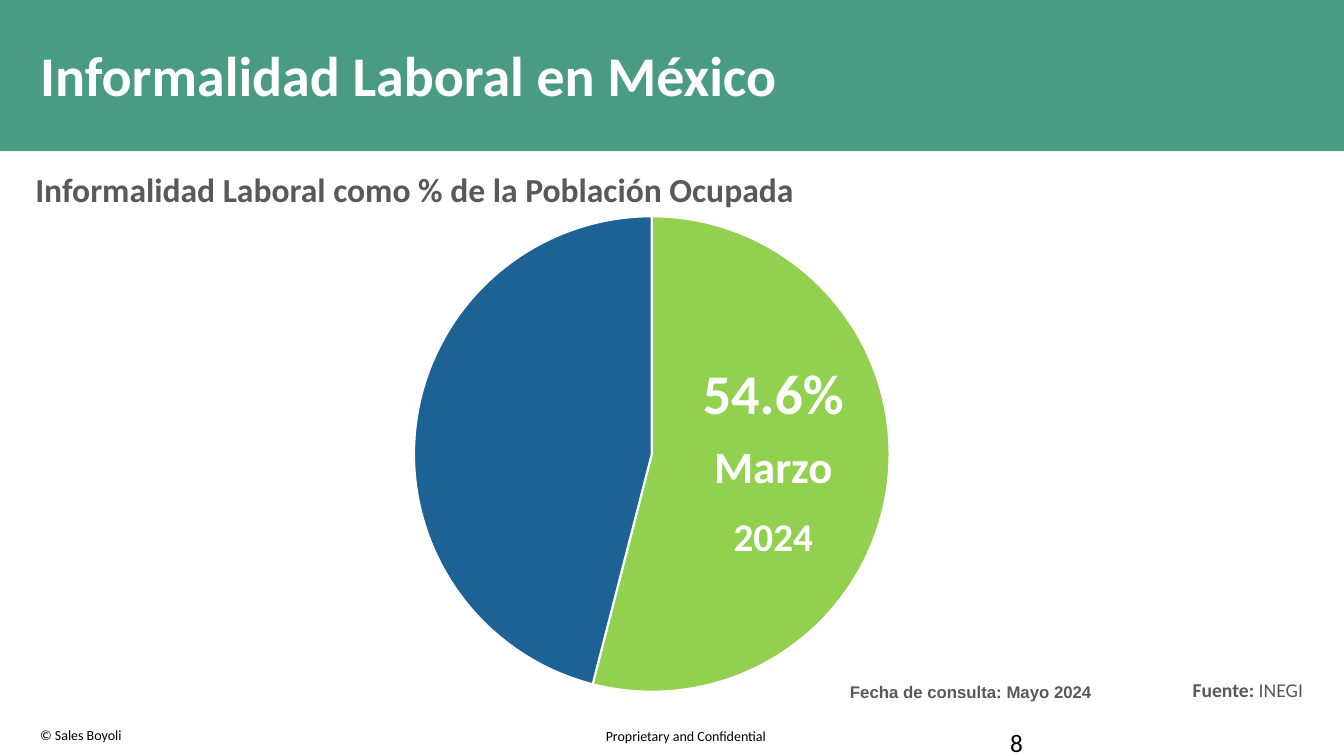
"""Build the slide on informal employment in Mexico."""
import pptx
import pptx.chart.data
import pptx.dml.color
import pptx.enum.chart
import pptx.enum.shapes
import pptx.enum.text
import pptx.oxml
import pptx.util
from dataclasses import dataclass

Inches = pptx.util.Inches
Pt = pptx.util.Pt
ALIGN = pptx.enum.text.PP_ALIGN
ANCHOR = pptx.enum.text.MSO_ANCHOR


@dataclass(frozen=True)
class Theme:
    font: str = "Calibri"
    date_font: str = "Arial"
    band: str = "4A9B83"
    white: str = "FFFFFF"
    black: str = "000000"
    gray: str = "595959"
    informal: str = "92D050"
    formal: str = "1D6294"
    title: int = 40
    month: int = 32
    year: int = 28
    subtitle: int = 24
    number: int = 18
    source: int = 14
    date: int = 12
    footer: int = 10


THEME = Theme()
SLIDE_SIZE = (13.33, 7.5)
BAND_HEIGHT = 1.5
TITLE = "Informalidad Laboral en México"
SUBTITLE = "Informalidad Laboral como % de la Población Ocupada"
QUERY_DATE = "Fecha de consulta: Mayo 2024"
SOURCE = ("Fuente:", " INEGI")
COPYRIGHT = "© Sales Boyoli"
NOTICE = "Proprietary and Confidential"
SLIDE_NUMBER = "8"
SHARES = [("1", 54, THEME.informal), ("2", 46, THEME.formal)]
HIGHLIGHT = [("54.6%", THEME.title), ("Marzo", THEME.month), ("2024", THEME.year)]
HIGHLIGHT_LINE = 47.8
CHART_BOX = (3.18, 2, 6.57, 5.01)
PIE_DIAMETER = 4.72


def color(value):
    return pptx.dml.color.RGBColor.from_string(value)


def set_font(font, size, fill, bold=None, name=THEME.font):
    font.name = name
    font.size = Pt(size)
    font.bold = bold
    font.color.rgb = color(fill)


def add_text(slide, box, lines, fill, bold=False, name=THEME.font, wrap=True,
             inset=None, anchor=ANCHOR.TOP, align=ALIGN.LEFT, spacing=None):
    shape = slide.shapes.add_textbox(*map(Inches, box))
    frame = shape.text_frame
    frame.word_wrap = wrap
    frame.vertical_anchor = anchor
    if inset is not None:
        frame.margin_left = frame.margin_right = Inches(inset)
        frame.margin_top = frame.margin_bottom = Inches(inset)
    for index, (text, size) in enumerate(lines):
        paragraph = frame.add_paragraph() if index else frame.paragraphs[0]
        paragraph.alignment = align
        paragraph.line_spacing = spacing
        for part in [text] if isinstance(text, str) else text:
            paragraph.add_run().text = part
        set_font(paragraph.font, size, fill, bold, name)
    return shape


def add_band(slide):
    band = slide.shapes.add_shape(
        pptx.enum.shapes.MSO_SHAPE.RECTANGLE, 0, 0,
        Inches(SLIDE_SIZE[0]), Inches(BAND_HEIGHT))
    band.shadow.inherit = False
    band.fill.solid()
    band.fill.fore_color.rgb = color(THEME.band)
    band.line.fill.background()


def fix_plot_size(chart):
    plot_area = chart.plots[0]._element.getparent()
    for layout in plot_area.findall(pptx.oxml.ns.qn("c:layout")):
        plot_area.remove(layout)
    width, height = (PIE_DIAMETER / side for side in CHART_BOX[2:])
    values = {"x": (1 - width) / 2, "y": (1 - height) / 2, "w": width, "h": height}
    sizes = "".join(f'<c:{key} val="{value:.3f}"/>' for key, value in values.items())
    plot_area.insert(0, pptx.oxml.parse_xml(
        f'<c:layout {pptx.oxml.ns.nsdecls("c")}><c:manualLayout>'
        '<c:layoutTarget val="inner"/><c:xMode val="edge"/><c:yMode val="edge"/>'
        f'{sizes}</c:manualLayout></c:layout>'))


def add_pie(slide):
    data = pptx.chart.data.CategoryChartData()
    data.categories = [category for category, _, _ in SHARES]
    data.add_series("Series 1", [value for _, value, _ in SHARES])
    chart = slide.shapes.add_chart(
        pptx.enum.chart.XL_CHART_TYPE.PIE, *map(Inches, CHART_BOX), data).chart
    chart.has_legend = False
    chart.has_title = False
    set_font(chart.font, THEME.footer, THEME.black)
    plot = chart.plots[0]
    plot.vary_by_categories = True
    for index, (_, _, fill) in enumerate(SHARES):
        slice_format = plot.series[0].points[index].format
        slice_format.fill.solid()
        slice_format.fill.fore_color.rgb = color(fill)
        slice_format.line.color.rgb = color(THEME.white)
        slice_format.line.width = Pt(1.5)
    fix_plot_size(chart)


def main():
    presentation = pptx.Presentation()
    presentation.slide_width, presentation.slide_height = map(Inches, SLIDE_SIZE)
    slide = presentation.slides.add_slide(presentation.slide_layouts[6])
    add_text(slide, (5.91, 7.17, 1.81, 0.27), [(NOTICE, THEME.footer)],
             THEME.black, wrap=False)
    add_text(slide, (0.3, 7.16, 3.37, 0.27), [(COPYRIGHT, THEME.footer)], THEME.black)
    add_band(slide)
    add_text(slide, (9.92, 7.17, 3.11, 0.25), [(SLIDE_NUMBER, THEME.number)], THEME.black)
    add_text(slide, (0.3, 0.14, 12.72, 1.27), [(TITLE, THEME.title)], THEME.white,
             bold=True, anchor=ANCHOR.MIDDLE, spacing=0.9)
    add_text(slide, (0.3, 1.63, 9.61, 0.5), [(SUBTITLE, THEME.subtitle)], THEME.gray,
             bold=True, inset=0.05)
    add_text(slide, (8.38, 6.71, 3.55, 0.3), [(QUERY_DATE, THEME.date)], THEME.gray,
             bold=True, name=THEME.date_font, inset=0.05)
    source = add_text(slide, (11.73, 6.68, 1.3, 0.34), [(SOURCE, THEME.source)],
                      THEME.gray, wrap=False)
    source.text_frame.paragraphs[0].runs[0].font.bold = True
    add_pie(slide)
    add_text(slide, (6.14, 3.51, 3.06, 2.06), HIGHLIGHT, THEME.white, bold=True,
             align=ALIGN.CENTER, spacing=Pt(HIGHLIGHT_LINE))
    presentation.save("out.pptx")


if __name__ == "__main__":
    main()
